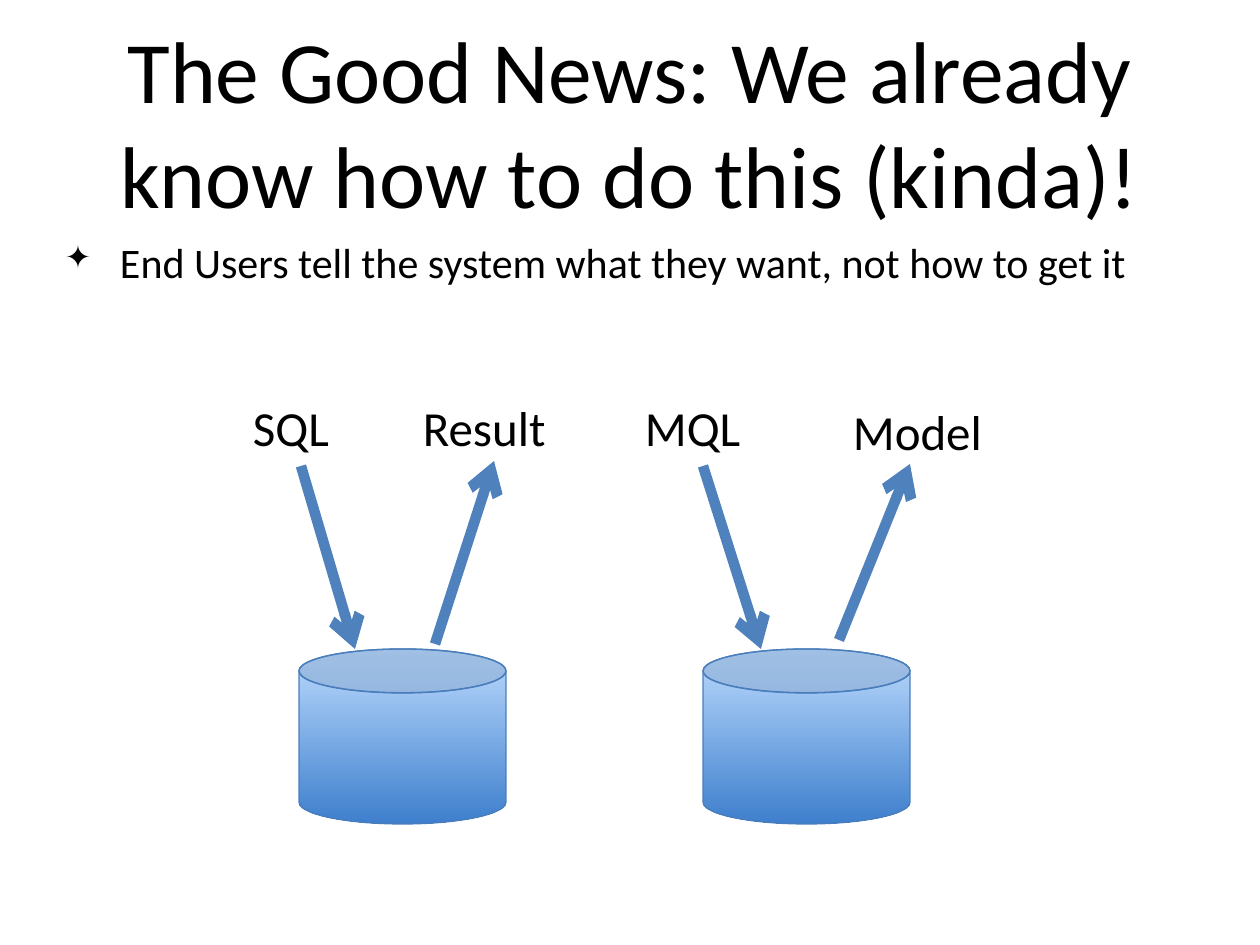
import pptx
import pptx.util
import pptx.dml.color
import pptx.enum.shapes
import pptx.enum.text
import pptx.oxml
import pptx.oxml.ns

PX = 914400 / 126
HUES = {"ink": "000000", "blue": "4F81BD", "edge": "4A7DBB", "light": "BDDBFE", "deep": "3E7FCD"}
NS = pptx.oxml.ns.nsdecls("a")
KIND = pptx.enum.shapes.MSO_SHAPE
ALIGN = pptx.enum.text.PP_ALIGN
ANCHOR = pptx.enum.text.MSO_ANCHOR


def emu(*nums):
    return [round(n * PX) for n in nums]


def write(shape, text, size, frame, align):
    body = shape.text_frame
    for key, val in frame.items():
        setattr(body, key, val)
    para = body.paragraphs[0]
    para.alignment = align
    run = para.add_run()
    run.text = text
    look = {"name": "Calibri", "size": pptx.util.Pt(size)}
    for key, val in look.items():
        setattr(run.font, key, val)
    run.font.color.rgb = rgb["ink"]
    return para


rgb = {key: pptx.dml.color.RGBColor.from_string(val) for key, val in HUES.items()}
sides = ["margin_left", "margin_top", "margin_right", "margin_bottom"]

deck = pptx.Presentation()
deck.slide_width, deck.slide_height = emu(1260, 945)
slide = deck.slides.add_slide(deck.slide_layouts[5])
shapes = slide.shapes

title = shapes.title
title.left, title.top, title.width, title.height = emu(63, 42, 1134, 158)
frame = {"word_wrap": True, "vertical_anchor": ANCHOR.MIDDLE,
         "auto_size": pptx.enum.text.MSO_AUTO_SIZE.NONE}
write(title, "The Good News: We already know how to do this (kinda)!", 50, frame, ALIGN.CENTER)

for left in (299, 703):
    can = shapes.add_shape(KIND.CAN, *emu(left, 649, 207, 175))
    can.fill.gradient()
    can.fill.gradient_angle = 270
    for stop, hue, spot in zip(can.fill.gradient_stops, ("light", "deep"), (0, 1)):
        stop.color.rgb = rgb[hue]
        stop.position = spot
    lid = shapes.add_shape(KIND.OVAL, *emu(left, 649, 207, 44))
    lid.fill.solid()
    lid.fill.fore_color.rgb = rgb["blue"]
    tint = lid.fill._xPr.find(".//" + pptx.oxml.ns.qn("a:srgbClr"))
    tint.append(pptx.oxml.parse_xml(f'<a:alpha {NS} val="40000"/>'))
    for part in (can, lid):
        part.shadow.inherit = False
        part.line.color.rgb = rgb["edge"]
        part.line.width = pptx.util.Pt(0.75)

for ends in [(301, 466, 355, 649), (435, 644, 494, 461),
             (703, 466, 761, 649), (839, 640, 910, 464)]:
    arrow = shapes.add_connector(pptx.enum.shapes.MSO_CONNECTOR.STRAIGHT, *emu(*ends))
    arrow.line.color.rgb = rgb["blue"]
    arrow.line.width = pptx.util.Pt(6)
    arrow.line._get_or_add_ln().append(pptx.oxml.parse_xml(f'<a:tailEnd {NS} type="arrow"/>'))
    arrow._element.spPr.append(pptx.oxml.parse_xml(f"<a:effectLst {NS}/>"))

frame = {"word_wrap": False, **dict.fromkeys(sides, 0)}
for text, left, top, wide in [("SQL", 253, 397, 77), ("Result", 423, 397, 125),
                              ("MQL", 645, 397, 97), ("Model", 853, 401, 130)]:
    label = shapes.add_textbox(*emu(left, top, wide, 59))
    write(label, text, 28, frame, ALIGN.LEFT)

note = shapes.add_textbox(*emu(34, 231, 1177, 145))
frame = {"word_wrap": True, **dict.fromkeys(sides, emu(5)[0])}
para = write(note, "End Users tell the system what they want, not how to get it", 24, frame, ALIGN.LEFT)
para.space_before = pptx.util.Pt(4.9)
props = para._p.get_or_add_pPr()
for key, val in zip(("marL", "indent"), emu(81, -55)):
    props.set(key, str(val))
for tag in ('buSzPct {} val="75000"', 'buChar {} char="✦"'):
    props.append(pptx.oxml.parse_xml(f"<a:{tag.format(NS)}/>"))

deck.save("out.pptx")
